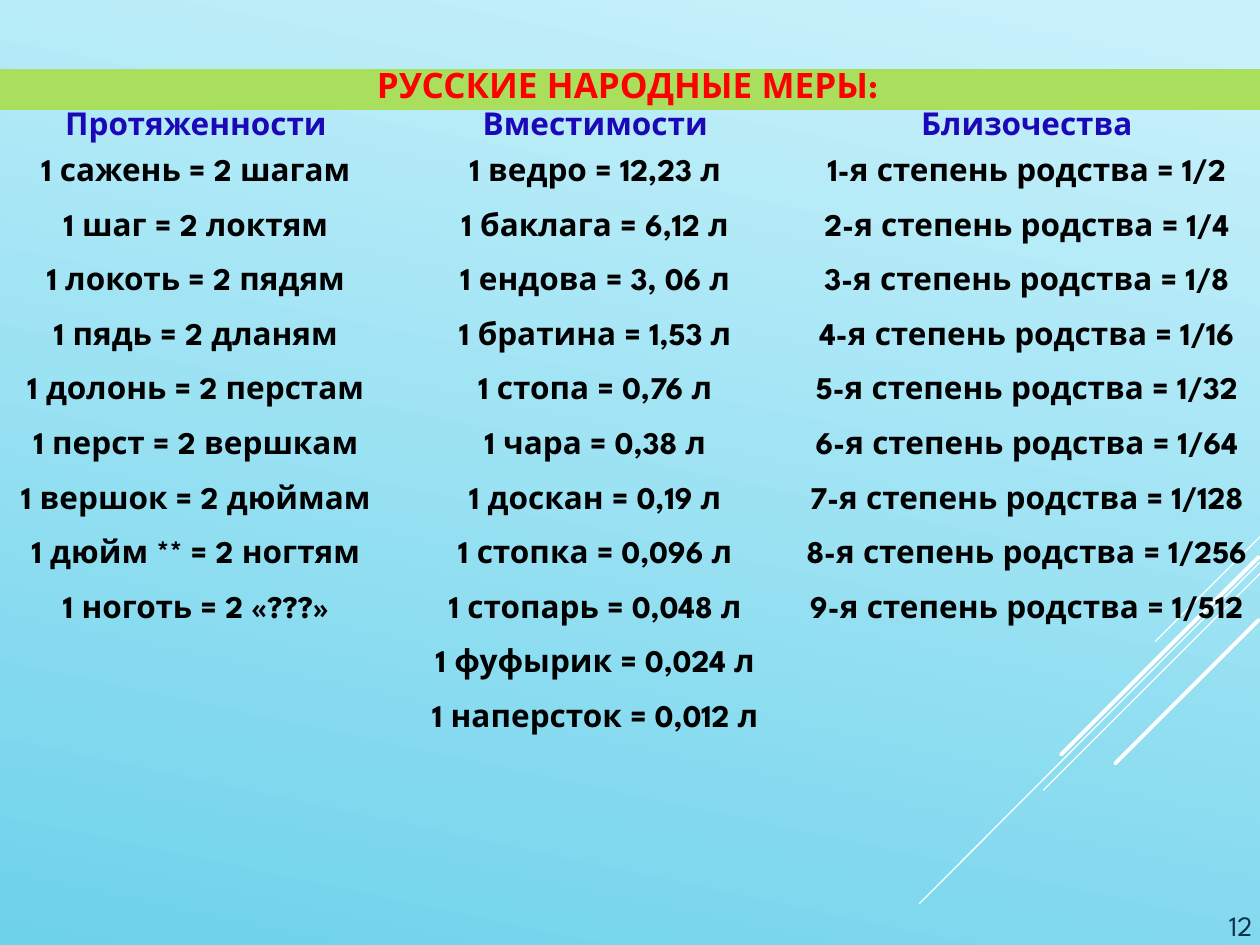
import itertools

import pptx
import pptx.dml.color
import pptx.enum.shapes
import pptx.enum.text
import pptx.oxml.ns
import pptx.util
from pptx.dml.color import RGBColor
from pptx.util import Cm

FONT = "League Spartan"
SKY_LIGHT = RGBColor(0xC8, 0xF1, 0xFB)
SKY_DEEP = RGBColor(0x6E, 0xD2, 0xEB)
WHITE = RGBColor(0xFF, 0xFF, 0xFF)
GREEN = RGBColor(0xAA, 0xDF, 0x5E)
RED = RGBColor(0xFF, 0x00, 0x00)
BLUE = RGBColor(0x1D, 0x08, 0xB8)
BLACK = RGBColor(0x00, 0x00, 0x00)
NAVY = RGBColor(0x0A, 0x30, 0x4A)
PLAIN_TABLE_STYLE = "{2D5ABB26-0587-4C30-8999-92F81FD0307C}"

TITLE = "РУССКИЕ НАРОДНЫЕ МЕРЫ:"
LENGTHS = [
    "1 сажень = 2 шагам",
    "1 шаг = 2 локтям",
    "1 локоть = 2 пядям",
    "1 пядь = 2 дланям",
    "1 долонь = 2 перстам",
    "1 перст = 2 вершкам",
    "1 вершок = 2 дюймам",
    "1 дюйм ** = 2 ногтям",
    "1 ноготь = 2 «???»",
]
VOLUMES = [
    "1 ведро = 12,23 л",
    "1 баклага = 6,12 л",
    "1 ендова = 3, 06 л",
    "1 братина = 1,53 л",
    "1 стопа = 0,76 л",
    "1 чара = 0,38 л",
    "1 доскан = 0,19 л",
    "1 стопка = 0,096 л",
    "1 стопарь = 0,048 л",
    "1 фуфырик = 0,024 л",
    "1 наперсток = 0,012 л",
]
KINSHIP = [f"{degree}-я степень родства = 1/{2 ** degree}" for degree in range(1, 10)]
MEASURES = {"Протяженности": LENGTHS, "Вместимости": VOLUMES, "Близочества": KINSHIP}
COLUMN_WIDTHS = [8.1, 8, 9.4]
HEADING_HEIGHT = 0.64
ROW_HEIGHT = 1.1

RAYS = [
    (25.4, 10.82, 23.29, 12.93, 0.75),
    (25.4, 11.33, 18.54, 18.21, 0.75),
    (25.4, 11.56, 21.03, 15.93, 0.75),
    (25.37, 11.23, 21.39, 15.21, 2.25),
    (25.37, 12.5, 22.48, 15.39, 2.25),
]


def paint_background(slide):
    fill = slide.background.fill
    fill.gradient()
    fill.gradient_angle = 258
    stops = zip(fill.gradient_stops, (0.04, 1), (SKY_LIGHT, SKY_DEEP))
    for stop, position, color in stops:
        stop.position = position
        stop.color.rgb = color


def add_ray(slide, left, top, right, bottom, width):
    ray = slide.shapes.add_connector(
        pptx.enum.shapes.MSO_CONNECTOR.STRAIGHT, Cm(left), Cm(top), Cm(right), Cm(bottom)
    )
    ray.line.color.rgb = WHITE
    ray.line.width = pptx.util.Pt(width)
    ray.line._get_or_add_ln().set("cap", "rnd")
    properties = ray._element.spPr
    properties.append(pptx.oxml.parse_xml(f"<a:effectLst {pptx.oxml.ns.nsdecls('a')}/>"))


def write_text(frame, text, size=18, color=BLACK, bold=True, align="CENTER"):
    paragraph = frame.paragraphs[0]
    paragraph.alignment = pptx.enum.text.PP_ALIGN[align]
    run = paragraph.add_run()
    run.text = text
    run.font.name = FONT
    run.font.size = pptx.util.Pt(size)
    run.font.bold = bold
    run.font.color.rgb = color


def write_cell(cell, text, **text_format):
    cell.vertical_anchor = pptx.enum.text.MSO_ANCHOR.MIDDLE
    cell.margin_left = cell.margin_right = Cm(0.08)
    cell.margin_top = cell.margin_bottom = Cm(0.08)
    cell.fill.background()
    if text:
        write_text(cell.text_frame, text, **text_format)


def add_measures_table(slide):
    rows = list(itertools.zip_longest(*MEASURES.values(), fillvalue=""))
    heights = [HEADING_HEIGHT] * 2 + [ROW_HEIGHT] * len(rows)
    frame = slide.shapes.add_table(
        len(heights), len(COLUMN_WIDTHS),
        Cm(-0.1), Cm(1.4), Cm(sum(COLUMN_WIDTHS)), Cm(sum(heights)),
    )
    table = frame.table
    table._tbl.tblPr.find(pptx.oxml.ns.qn("a:tableStyleId")).text = PLAIN_TABLE_STYLE
    for column, width in zip(table.columns, COLUMN_WIDTHS):
        column.width = Cm(width)
    for row, height in zip(table.rows, heights):
        row.height = Cm(height)

    title_cell = table.cell(0, 0)
    title_cell.merge(table.cell(0, len(COLUMN_WIDTHS) - 1))
    write_cell(title_cell, TITLE, size=20, color=RED)
    title_cell.fill.solid()
    title_cell.fill.fore_color.rgb = GREEN

    for row_index, texts in enumerate([tuple(MEASURES), *rows], start=1):
        color = BLUE if row_index == 1 else BLACK
        for column_index, text in enumerate(texts):
            write_cell(table.cell(row_index, column_index), text, color=color)


def add_page_number(slide, number):
    box = slide.shapes.add_textbox(Cm(23.11), Cm(17.27), Cm(2.39), Cm(1.85))
    box.text_frame.word_wrap = True
    box.text_frame.vertical_anchor = pptx.enum.text.MSO_ANCHOR.BOTTOM
    write_text(box.text_frame, number, size=16, color=NAVY, bold=False, align="RIGHT")


def main():
    presentation = pptx.Presentation()
    presentation.slide_width = Cm(25.4)
    presentation.slide_height = Cm(19.05)
    slide = presentation.slides.add_slide(presentation.slide_layouts[6])
    paint_background(slide)
    for ray in RAYS:
        add_ray(slide, *ray)
    add_measures_table(slide)
    add_page_number(slide, "12")
    presentation.save("out.pptx")


if __name__ == "__main__":
    main()
